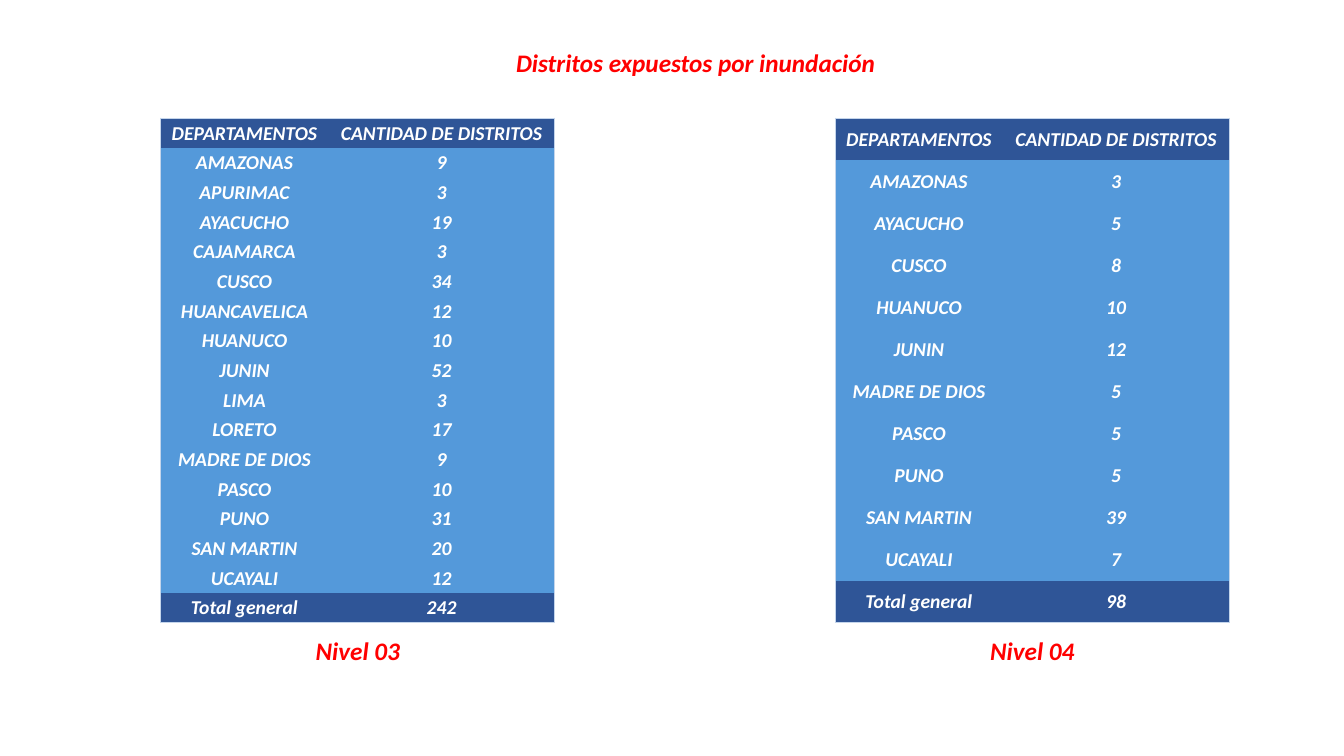
from lxml import etree
from pptx import Presentation
from pptx import util as u
from pptx.dml.color import RGBColor
from pptx.enum import text
from pptx.oxml import ns

RED = RGBColor(0xFF, 0x00, 0x00)
WHITE = RGBColor(0xFF, 0xFF, 0xFF)
NAVY = RGBColor(0x2F, 0x55, 0x97)
BLUE = RGBColor(0x54, 0x99, 0xDA)
PALE = RGBColor(0xC4, 0xD5, 0xEB)
NO_GRID_STYLE = "{2D5ABB26-0587-4C30-8999-92F81FD0307C}"

HEADER = ("DEPARTAMENTOS", "CANTIDAD DE DISTRITOS")
LEVEL_3 = [
    ("AMAZONAS", 9), ("APURIMAC", 3), ("AYACUCHO", 19), ("CAJAMARCA", 3),
    ("CUSCO", 34), ("HUANCAVELICA", 12), ("HUANUCO", 10), ("JUNIN", 52),
    ("LIMA", 3), ("LORETO", 17), ("MADRE DE DIOS", 9), ("PASCO", 10),
    ("PUNO", 31), ("SAN MARTIN", 20), ("UCAYALI", 12), ("Total general", 242),
]
LEVEL_4 = [
    ("AMAZONAS", 3), ("AYACUCHO", 5), ("CUSCO", 8), ("HUANUCO", 10),
    ("JUNIN", 12), ("MADRE DE DIOS", 5), ("PASCO", 5), ("PUNO", 5),
    ("SAN MARTIN", 39), ("UCAYALI", 7), ("Total general", 98),
]


class FloodSlide:
    """Draws headings and district tables in one style on a slide."""

    font_name = "Calibri"
    column_widths = (1.67, 2.24)
    table_top, table_height = 1.17, 5.01

    def __init__(self, slide):
        self.slide = slide

    def label(self, frame, wording, size, color):
        paragraph = frame.paragraphs[0]
        paragraph.text = str(wording)
        paragraph.alignment = text.PP_ALIGN.CENTER
        font = paragraph.font
        font.name, font.size = self.font_name, u.Pt(size)
        font.bold = font.italic = True
        font.color.rgb = color

    def heading(self, wording, left, top, width, wrap=True):
        box = self.slide.shapes.add_textbox(
            u.Inches(left), u.Inches(top), u.Inches(width), u.Inches(0.4))
        box.text_frame.word_wrap = wrap
        box.text_frame.auto_size = text.MSO_AUTO_SIZE.SHAPE_TO_FIT_TEXT
        self.label(box.text_frame, wording, 18, RED)

    def border(self, cell, side):
        properties = cell._tc.get_or_add_tcPr()
        line = etree.SubElement(properties, ns.qn(f"a:ln{side}"), w=str(u.Pt(0.5)))
        fill = etree.SubElement(line, ns.qn("a:solidFill"))
        etree.SubElement(fill, ns.qn("a:srgbClr"), val=str(PALE))

    def district_table(self, left, districts):
        rows = [HEADER, *districts]
        last = len(rows) - 1
        table = self.slide.shapes.add_table(
            len(rows), len(HEADER), u.Inches(left), u.Inches(self.table_top),
            u.Inches(sum(self.column_widths)), u.Inches(self.table_height)).table
        table._tbl.tblPr.find(ns.qn("a:tableStyleId")).text = NO_GRID_STYLE
        table.horz_banding = False
        for column, width in zip(table.columns, self.column_widths):
            column.width = u.Inches(width)
        for r, values in enumerate(rows):
            table.rows[r].height = u.Inches(self.table_height / len(rows))
            for c, value in enumerate(values):
                cell = table.cell(r, c)
                cell.margin_left = cell.margin_right = cell.margin_top = u.Inches(0.01)
                cell.margin_bottom = 0
                cell.vertical_anchor = text.MSO_ANCHOR.MIDDLE
                self.border(cell, "R" if c else "L")
                if r == 0:
                    self.border(cell, "T")
                elif r == last:
                    self.border(cell, "B")
                cell.fill.solid()
                cell.fill.fore_color.rgb = NAVY if r in (0, last) else BLUE
                self.label(cell.text_frame, value, 14, WHITE)


def main():
    presentation = Presentation()
    presentation.slide_width = u.Inches(13.33)
    presentation.slide_height = u.Inches(7.5)
    page = FloodSlide(presentation.slides.add_slide(presentation.slide_layouts[6]))
    page.heading("Distritos expuestos por inundación", 5, 0.42, 3.8, wrap=False)
    levels = (("Nivel 03", 1.59, LEVEL_3), ("Nivel 04", 8.28, LEVEL_4))
    for level, left, districts in levels:
        page.heading(level, left + 1.36, 6.25, 1.2)
        page.district_table(left, districts)
    presentation.save("out.pptx")


if __name__ == "__main__":
    main()
